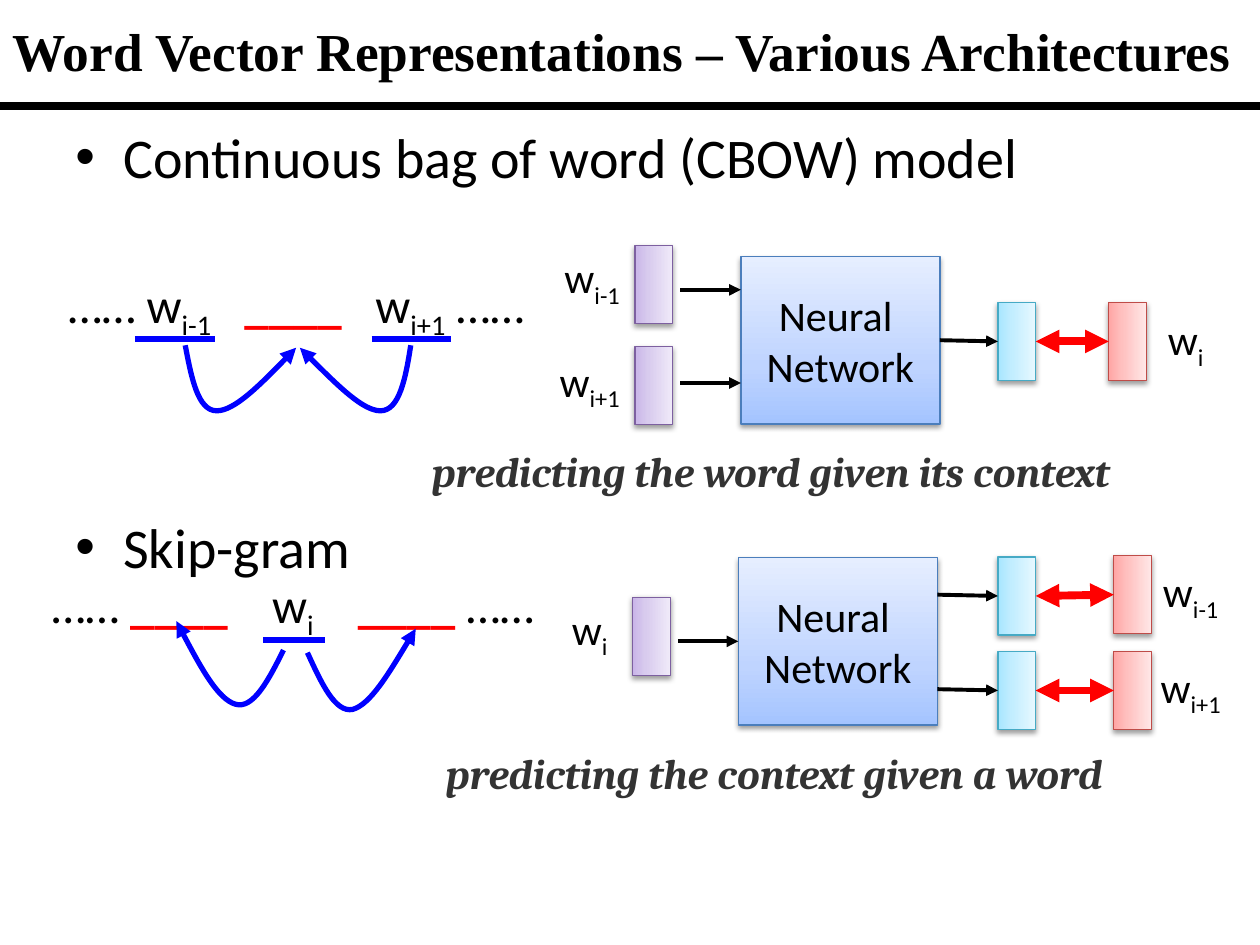
from lxml.etree import SubElement
from pptx import Presentation
from pptx.dml.color import RGBColor
from pptx.enum.shapes import MSO_CONNECTOR, MSO_SHAPE
from pptx.enum.text import MSO_ANCHOR, PP_ALIGN
from pptx.oxml import parse_xml
from pptx.oxml.ns import nsdecls, qn
from pptx.util import Inches, Pt

TITLE_STYLE = {"name": "Times New Roman", "size": Pt(30.5), "bold": True}
BULLET_STYLE = {"name": "Calibri", "size": Pt(32)}
SENTENCE_STYLE = {"name": "Calibri", "size": Pt(28)}
LABEL_STYLE = {"name": "Calibri", "size": Pt(24)}
CAPTION_STYLE = {"name": "Cambria", "size": Pt(24), "bold": True, "italic": True}

TITLE = "Word Vector Representations – Various Architectures"
BULLETS = [("Continuous bag of word (CBOW) model", 0.92), ("Skip-gram", 4.02)]
CAPTIONS = [
    ("predicting the word given its context", 3.33, 3.49),
    ("predicting the context given a word", 3.44, 5.88),
]
BLANK = ("____", "blank")
SENTENCES = [
    (0.02, 2.13, 0.52, (1.4, 2.44),
     [("…… w", ""), ("i-1", "sub"), ("\t", ""), BLANK, ("\tw", ""), ("i+1", "sub"), (" ……", "")]),
    (0, 4.51, 0.41, (1.75, 2.43),
     [("…… ", ""), BLANK, ("\tw", ""), ("i", "sub"), ("\t", ""), BLANK, (" ……", "")]),
]
LABELS = [
    ("i", 9.02, 2.44), ("i-1", 4.31, 1.95), ("i+1", 4.29, 2.77),
    ("i-1", 9.06, 4.44), ("i", 4.29, 4.74), ("i+1", 9.06, 5.2),
]

PALETTES = {
    "network": (("A4C4FF", "BFD4FF", "E6EEFF"), "4B7EBC", 270),
    "input": (("C9B5E8", "D8CBEE", "F0EAF9"), "7D60A0", 0),
    "output": (("A7E6FF", "C1EDFF", "E7F8FF"), "46AAC5", 0),
    "target": (("FFA6A5", "FFC0BF", "FFE7E7"), "BF4C48", 0),
}
GRADIENT_STOPS = (0, 35, 100)
NETWORK_SIZE = (1.58, 1.33)
VECTOR_SIZE = (0.3, 0.62)
BOXES = {
    "cbow network": ("network", 6.67, 2.7),
    "previous input": ("input", 5.19, 2.26),
    "next input": ("input", 5.19, 3.06),
    "cbow target": ("target", 8.95, 2.71),
    "cbow output": ("output", 8.07, 2.71),
    "skip network": ("network", 6.65, 5.09),
    "skip input": ("input", 5.17, 5.05),
    "previous target": ("target", 8.99, 4.72),
    "previous output": ("output", 8.07, 4.73),
    "next output": ("output", 8.07, 5.48),
    "next target": ("target", 8.99, 5.48),
}
LEFT, RIGHT = 1, 3
FLOW_ARROWS = [
    ((5.4, 2.3), (5.88, 2.3)),
    ((5.4, 3.04), (5.88, 3.04)),
    (("cbow network", RIGHT), ("cbow output", LEFT)),
    ((5.38, 5.09), ("skip network", LEFT)),
    ((7.44, 4.72), ("previous output", LEFT)),
    ((7.44, 5.47), ("next output", LEFT)),
]
COMPARISONS = ["cbow", "previous", "next"]
UNDERLINES = [(1.07, 1.71, 2.69), (2.95, 3.58, 2.69), (2.09, 2.58, 5.08)]
CURVES = [
    [(1.47, 2.74), (1.52, 3), (1.57, 3.26), (1.72, 3.26), (1.86, 3.26), (2.11, 3.01), (2.35, 2.76)],
    [(3.26, 2.74), (3.22, 3), (3.17, 3.26), (3.02, 3.26), (2.88, 3.26), (2.63, 3.01), (2.38, 2.76)],
    [(2.25, 5.16), (2.13, 5.4), (2.01, 5.63), (1.87, 5.59), (1.73, 5.55), (1.56, 5.24), (1.4, 4.93)],
    [(2.44, 5.18), (2.55, 5.42), (2.66, 5.66), (2.8, 5.63), (2.94, 5.59), (3.12, 5.29), (3.3, 4.99)],
]


def color(value):
    return RGBColor.from_string(value)


def add_run(paragraph, text, style, value="000000", baseline=0):
    run = paragraph.add_run()
    run.text = text
    for name, setting in style.items():
        setattr(run.font, name, setting)
    run.font.color.rgb = color(value)
    if baseline:
        run._r.get_or_add_rPr().set("baseline", str(baseline * 1000))


def add_text_box(slide, left, top, width, height):
    frame = slide.shapes.add_textbox(*map(Inches, (left, top, width, height))).text_frame
    frame.word_wrap = True
    return frame, frame.paragraphs[0]


def style_line(line, value, width, ends=()):
    line.color.rgb = color(value)
    line.width = Pt(width)
    for end in ends:
        SubElement(line._get_or_add_ln(), qn(f"a:{end}"), type="triangle")


def add_line(slide, begin, end, value, width, ends=(), boxes=None):
    points = [point if not isinstance(point[0], str) else (0, 0) for point in (begin, end)]
    connector = slide.shapes.add_connector(
        MSO_CONNECTOR.STRAIGHT, *(Inches(number) for point in points for number in point))
    for point, connect in ((begin, connector.begin_connect), (end, connector.end_connect)):
        if isinstance(point[0], str):
            connect(boxes[point[0]], point[1])
    style_line(connector.line, value, width, ends)
    SubElement(connector._element.spPr, qn("a:effectLst"))


def add_curve(slide, points):
    points = [(Inches(x), Inches(y)) for x, y in points]
    builder = slide.shapes.build_freeform(*points[0])
    builder.add_line_segments([points[3], points[6]], close=False)
    shape = builder.convert_to_shape()
    shape.shadow.inherit = False
    shape.fill.background()
    style_line(shape.line, "0000FF", 3, ["tailEnd"])
    segments = list(shape._element.iter(qn("a:lnTo")))
    for segment, controls in zip(segments, (points[1:4], points[4:7])):
        curve = parse_xml(f"<a:cubicBezTo {nsdecls('a')}/>")
        for x, y in controls:
            SubElement(curve, qn("a:pt"), x=str(x - shape.left), y=str(y - shape.top))
        segment.getparent().replace(segment, curve)


def add_box(slide, kind, center_x, center_y):
    width, height = NETWORK_SIZE if kind == "network" else VECTOR_SIZE
    stops, outline, angle = PALETTES[kind]
    shape = slide.shapes.add_shape(
        MSO_SHAPE.RECTANGLE, Inches(center_x - width / 2), Inches(center_y - height / 2),
        Inches(width), Inches(height))
    shape.fill.background()
    style_line(shape.line, outline, 0.75)
    shape.shadow.inherit = False
    properties = shape._element.spPr
    stop_xml = "".join(
        f'<a:gs pos="{position * 1000}"><a:srgbClr val="{value}"/></a:gs>'
        for position, value in zip(GRADIENT_STOPS, stops))
    properties.replace(properties.find(qn("a:noFill")), parse_xml(
        f'<a:gradFill {nsdecls("a")} rotWithShape="1"><a:gsLst>{stop_xml}</a:gsLst>'
        f'<a:lin ang="{angle * 60000}" scaled="0"/></a:gradFill>'))
    properties.find(qn("a:effectLst")).append(parse_xml(
        f'<a:outerShdw {nsdecls("a")} blurRad="{Pt(3.1)}" dist="{Pt(1.6)}" dir="5400000" '
        'rotWithShape="0"><a:srgbClr val="000000"><a:alpha val="38000"/></a:srgbClr></a:outerShdw>'))
    if kind == "network":
        frame = shape.text_frame
        frame.vertical_anchor = MSO_ANCHOR.MIDDLE
        for paragraph, word in ((frame.paragraphs[0], "Neural "), (frame.add_paragraph(), "Network")):
            paragraph.alignment = PP_ALIGN.CENTER
            add_run(paragraph, word, LABEL_STYLE)
    return shape


def main():
    presentation = Presentation()
    presentation.slide_width, presentation.slide_height = Inches(10), Inches(7.5)
    slide = presentation.slides.add_slide(presentation.slide_layouts[6])

    add_line(slide, (0, 0.84), (10, 0.84), "000000", 4.5)
    frame, paragraph = add_text_box(slide, 0, 0, 10, 0.79)
    frame.vertical_anchor = MSO_ANCHOR.MIDDLE
    add_run(paragraph, TITLE, TITLE_STYLE)

    for text, top in BULLETS:
        frame, paragraph = add_text_box(slide, 0.5, top, 9, 0.64)
        add_run(paragraph, text, BULLET_STYLE)
        properties = paragraph._p.get_or_add_pPr()
        properties.set("marL", str(Inches(0.38)))
        properties.set("indent", str(Inches(-0.38)))
        SubElement(properties, qn("a:buFont"), typeface="Arial")
        SubElement(properties, qn("a:buChar"), char="•")

    for left, top, inset, tabs, parts in SENTENCES:
        frame, paragraph = add_text_box(slide, left, top, 4.67, 0.57)
        frame.margin_left = Inches(inset)
        tab_list = SubElement(paragraph._p.get_or_add_pPr(), qn("a:tabLst"))
        for tab in tabs:
            SubElement(tab_list, qn("a:tab"), pos=str(Inches(tab)), algn="l")
        for text, role in parts:
            blank = role == "blank"
            add_run(paragraph, text, {**SENTENCE_STYLE, "bold": blank},
                    "FF0000" if blank else "000000", -25 if role == "sub" else 0)

    for begin, end, top in UNDERLINES:
        add_line(slide, (begin, top), (end, top), "0000FF", 3)
    for points in CURVES:
        add_curve(slide, points)

    boxes = {name: add_box(slide, *box) for name, box in BOXES.items()}
    for begin, end in FLOW_ARROWS:
        add_line(slide, begin, end, "000000", 2.25, ["tailEnd"], boxes)
    for name in COMPARISONS:
        add_line(slide, (f"{name} output", RIGHT), (f"{name} target", LEFT),
                 "FF0000", 4.5, ["headEnd", "tailEnd"], boxes)

    for index, left, top in LABELS:
        frame, paragraph = add_text_box(slide, left, top, 0.78, 0.5)
        paragraph.alignment = PP_ALIGN.CENTER
        add_run(paragraph, "w", LABEL_STYLE)
        add_run(paragraph, index, LABEL_STYLE, baseline=-25)
    for text, left, top in CAPTIONS:
        frame, paragraph = add_text_box(slide, left, top, 6.5, 0.5)
        add_run(paragraph, text, CAPTION_STYLE, "333333")

    presentation.save("out.pptx")


if __name__ == "__main__":
    main()
